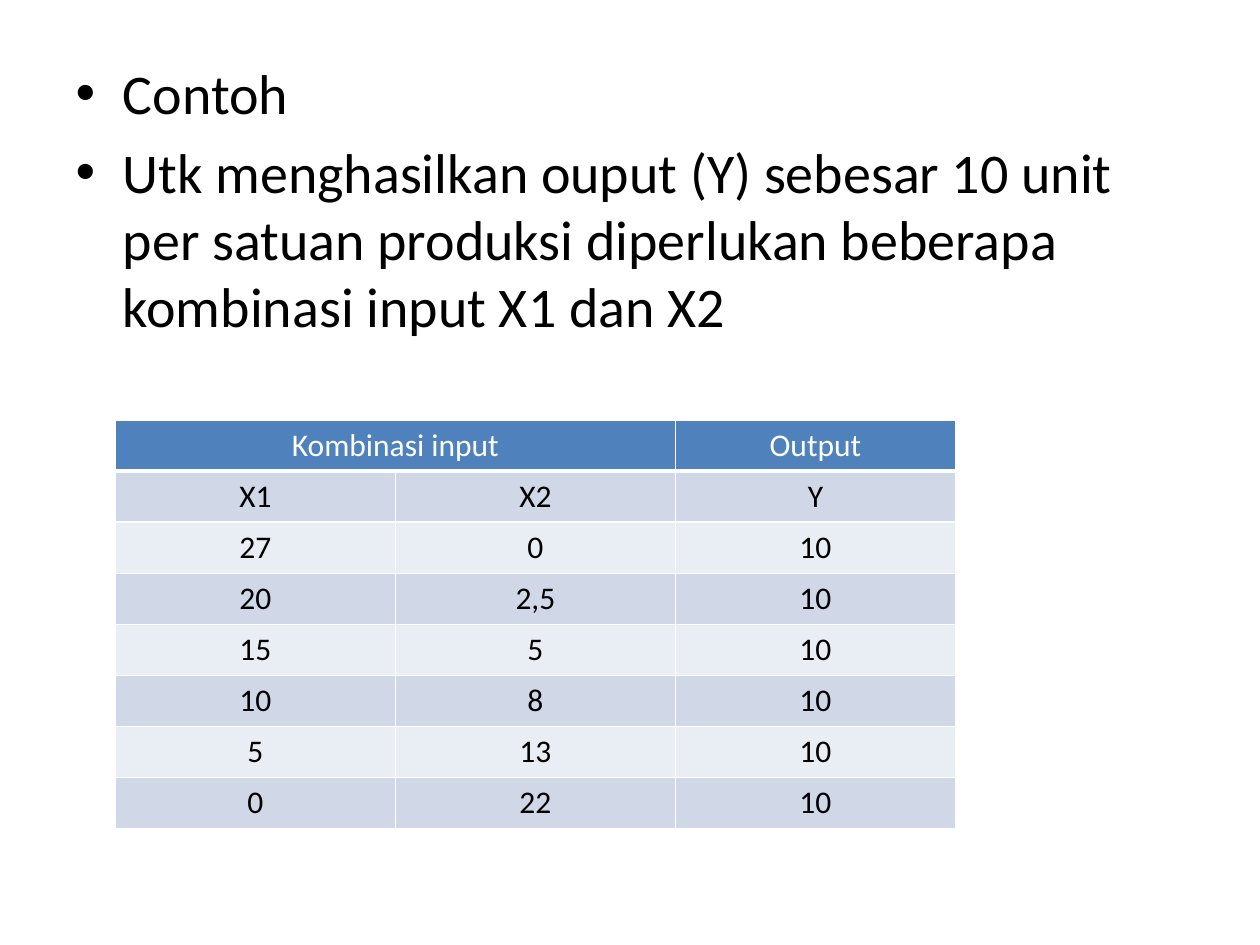
from lxml.etree import SubElement
from pptx import Presentation
from pptx.dml.color import RGBColor
from pptx.enum.text import PP_ALIGN
from pptx.oxml.ns import qn
from pptx.util import Pt


def rgb(hex_color):
    return RGBColor.from_string(hex_color)


def add_run(p, text, size, color):
    r = p.add_run()
    r.text = text
    r.font.name = "Calibri"
    r.font.size = Pt(size)
    r.font.bold = False
    r.font.color.rgb = rgb(color)


prs = Presentation()
prs.slide_width, prs.slide_height = Pt(720), Pt(540)
s = prs.slides.add_slide(prs.slide_layouts[1])

# The slide has no title
title = s.shapes.title
title.element.getparent().remove(title.element)

# Bulleted text: bullets, indents and spacing come from the layout
body = s.placeholders[1]
body.left, body.top, body.width, body.height = Pt(36), Pt(30), Pt(648), Pt(453)
tf = body.text_frame
bullets = [
    "Contoh",
    "Utk menghasilkan ouput (Y) sebesar 10 unit per satuan produksi "
    "diperlukan beberapa kombinasi input X1 dan X2",
]
for i, text in enumerate(bullets):
    p = tf.add_paragraph() if i else tf.paragraphs[0]
    add_run(p, text, 32, "000000")

# Table of input combinations
rows = [
    ("Kombinasi input", "", "Output"),
    ("X1", "X2", "Y"),
    ("27", "0", "10"),
    ("20", "2,5", "10"),
    ("15", "5", "10"),
    ("10", "8", "10"),
    ("5", "13", "10"),
    ("0", "22", "10"),
]
frame = s.shapes.add_table(len(rows), 3, Pt(66), Pt(240), Pt(480), Pt(233.6))
table = frame.table
for col in table.columns:
    col.width = Pt(160)
for row in table.rows:
    row.height = Pt(29.2)
table.cell(0, 0).merge(table.cell(0, 1))

for i, row in enumerate(rows):
    fill = "4F81BD" if i == 0 else ("E9EDF4", "D0D8E8")[i % 2]
    for j, text in enumerate(row):
        cell = table.cell(i, j)

        # White borders, thicker under the header row
        tc_pr = cell._tc.get_or_add_tcPr()
        for side in ("L", "R", "T", "B"):
            thick = (i, side) in ((0, "B"), (1, "T"))
            ln = SubElement(tc_pr, qn(f"a:ln{side}"), w=str(Pt(3 if thick else 1)))
            SubElement(SubElement(ln, qn("a:solidFill")), qn("a:srgbClr"), val="FFFFFF")

        cell.fill.solid()
        cell.fill.fore_color.rgb = rgb(fill)
        if text:
            p = cell.text_frame.paragraphs[0]
            p.alignment = PP_ALIGN.CENTER
            add_run(p, text, 18, "000000" if i else "FFFFFF")

prs.save("out.pptx")
